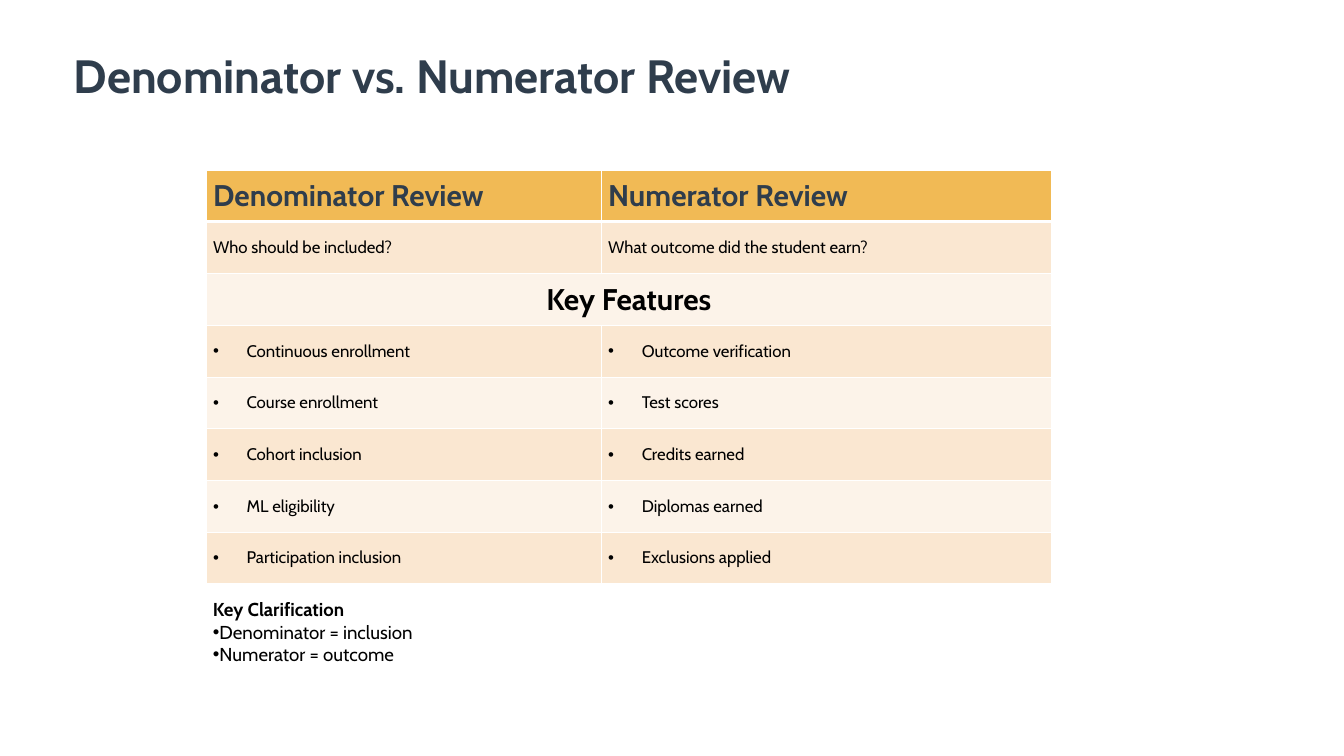
from lxml import etree
from pptx import Presentation
from pptx.dml.color import RGBColor
from pptx.enum.text import MSO_ANCHOR, PP_ALIGN
from pptx.oxml.ns import qn
from pptx.util import Inches, Pt

FONT = "Cabin"
NAVY = RGBColor(0x2F, 0x3D, 0x4C)
BLACK = RGBColor(0x00, 0x00, 0x00)
WHITE = RGBColor(0xFF, 0xFF, 0xFF)
GOLD = RGBColor(0xF1, 0xBA, 0x55)
PEACH = RGBColor(0xFA, 0xE7, 0xD1)
CREAM = RGBColor(0xFC, 0xF3, 0xE9)

MIDDLE = MSO_ANCHOR.MIDDLE
CENTER = PP_ALIGN.CENTER

COLUMN_WIDTHS = [5.88, 6.7]
ROW_HEIGHT = 0.77
HEADINGS = ["Denominator Review", "Numerator Review"]
QUESTIONS = ["Who should be included?", "What outcome did the student earn?"]
FEATURES = [
    ["Continuous enrollment", "Outcome verification"],
    ["Course enrollment", "Test scores"],
    ["Cohort inclusion", "Credits earned"],
    ["ML eligibility", "Diplomas earned"],
    ["Participation inclusion", "Exclusions applied"],
]
CLARIFICATIONS = ["Denominator = inclusion", "Numerator = outcome"]


def add_run(paragraph, text, size, color=BLACK, bold=False):
    run = paragraph.add_run()
    run.text = text
    run.font.name = FONT
    run.font.size = Pt(size)
    run.font.bold = bold
    run.font.color.rgb = color


def add_bullet(paragraph, indent=0):
    """Put a bullet on the paragraph, hanging by the indent in inches."""
    properties = paragraph._p.get_or_add_pPr()
    properties.set("marL", str(Inches(indent)))
    properties.set("indent", str(-Inches(indent)))
    etree.SubElement(properties, qn("a:buFont"), typeface="Arial")
    etree.SubElement(properties, qn("a:buChar"), char="•")


def set_borders(cell, bottom_width):
    """Draw white cell borders, which must come before the fill in the XML."""
    properties = cell._tc.get_or_add_tcPr()
    for side, width in (("L", 1), ("R", 1), ("T", 1), ("B", bottom_width)):
        line = etree.SubElement(properties, qn(f"a:ln{side}"), w=str(Pt(width)))
        fill = etree.SubElement(line, qn("a:solidFill"))
        etree.SubElement(fill, qn("a:srgbClr"), val=str(WHITE))


def style_cell(cell, color, bottom_width=1):
    set_borders(cell, bottom_width)
    cell.fill.solid()
    cell.fill.fore_color.rgb = color
    cell.vertical_anchor = MIDDLE


def add_text_box(slide, left, top, width, height):
    box = slide.shapes.add_textbox(Inches(left), Inches(top), Inches(width), Inches(height))
    box.text_frame.word_wrap = True
    return box.text_frame


def add_title(slide):
    frame = add_text_box(slide, 1, 0.6, 17.99, 1.2)
    frame.margin_top = Inches(0.1)
    add_run(frame.paragraphs[0], "Denominator vs. Numerator Review", 50, NAVY, bold=True)


def add_review_table(slide):
    row_count = 3 + len(FEATURES)
    table = slide.shapes.add_table(
        row_count, len(COLUMN_WIDTHS), Inches(3.07), Inches(2.53),
        Inches(sum(COLUMN_WIDTHS)), Inches(ROW_HEIGHT * row_count),
    ).table
    for column, width in zip(table.columns, COLUMN_WIDTHS):
        column.width = Inches(width)

    for row_index, row in enumerate(table.rows):
        row.height = Inches(ROW_HEIGHT)
        for cell in row.cells:
            if row_index == 0:
                style_cell(cell, GOLD, bottom_width=3)
            else:
                style_cell(cell, PEACH if row_index % 2 else CREAM)

    for column_index, (heading, question) in enumerate(zip(HEADINGS, QUESTIONS)):
        add_run(table.cell(0, column_index).text_frame.paragraphs[0], heading, 32, NAVY, bold=True)
        add_run(table.cell(1, column_index).text_frame.paragraphs[0], question, 18)

    features_cell = table.cell(2, 0)
    features_cell.merge(table.cell(2, 1))
    paragraph = features_cell.text_frame.paragraphs[0]
    paragraph.alignment = CENTER
    add_run(paragraph, "Key Features", 32, bold=True)

    for row_index, features in enumerate(FEATURES, start=3):
        for column_index, feature in enumerate(features):
            paragraph = table.cell(row_index, column_index).text_frame.paragraphs[0]
            add_bullet(paragraph, indent=0.5)
            add_run(paragraph, feature, 18)


def add_clarification(slide):
    frame = add_text_box(slide, 3.07, 8.85, 10.45, 1.11)
    add_run(frame.paragraphs[0], "Key Clarification", 20, bold=True)
    for text in CLARIFICATIONS:
        paragraph = frame.add_paragraph()
        add_bullet(paragraph)
        add_run(paragraph, text, 20)


def main():
    presentation = Presentation()
    presentation.slide_width = Inches(20)
    presentation.slide_height = Inches(11.25)
    slide = presentation.slides.add_slide(presentation.slide_layouts[6])
    add_title(slide)
    add_clarification(slide)
    add_review_table(slide)
    presentation.save("out.pptx")


if __name__ == "__main__":
    main()
